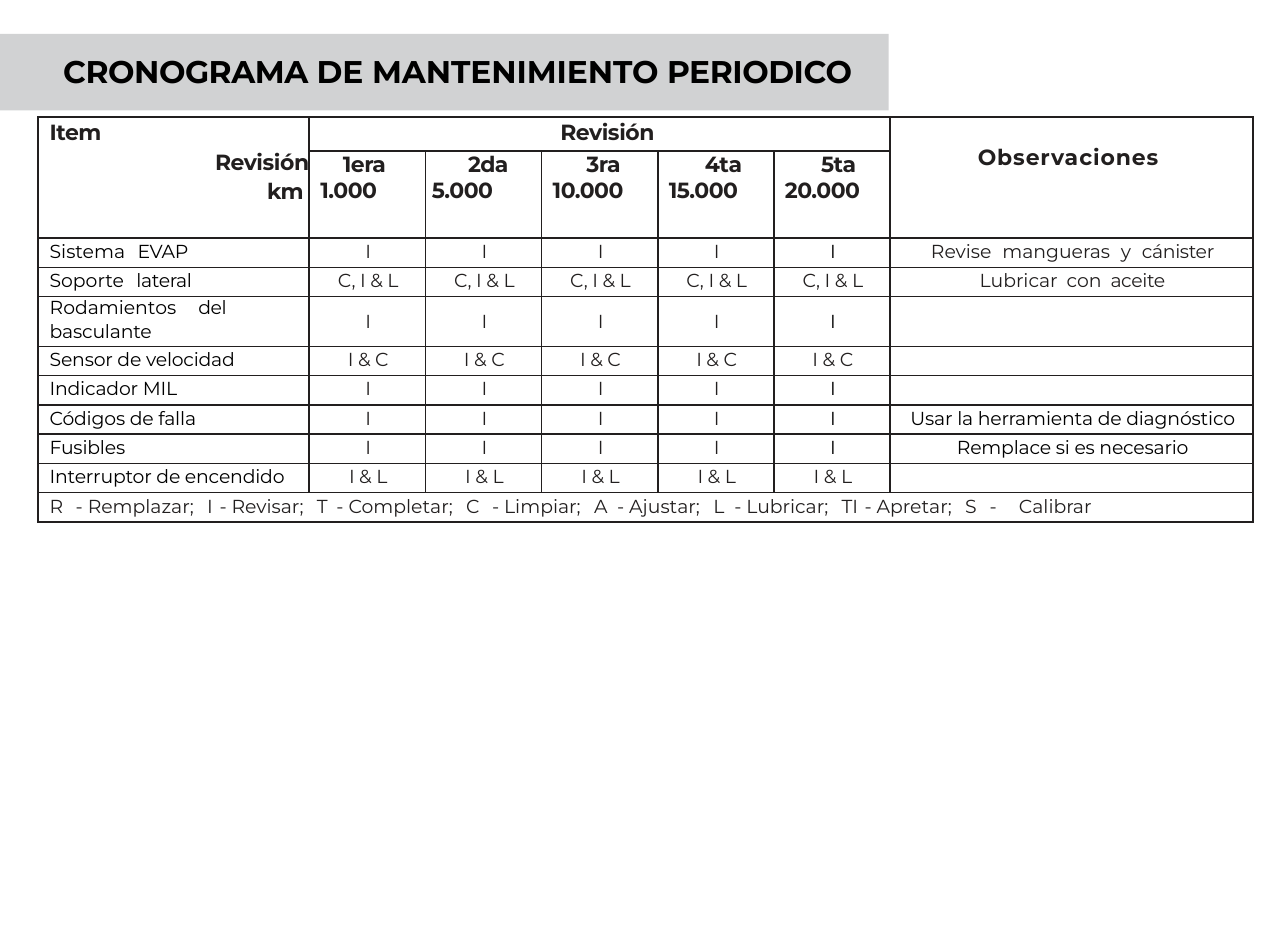
from dataclasses import dataclass

from lxml.etree import SubElement
from pptx import Presentation
from pptx.dml.color import RGBColor
from pptx.enum.shapes import MSO_SHAPE
from pptx.enum.text import MSO_AUTO_SIZE, PP_ALIGN
from pptx.oxml import parse_xml
from pptx.oxml.ns import nsdecls, qn
from pptx.util import Inches, Pt

# Slide and grid, in inches
W, H = 5.71, 4.14
COLS = [1.2] + [0.515] * 5 + [1.61]
ROWS = [0.15, 0.38, 0.13, 0.13, 0.22] + [0.13] * 6
THIN_COL_EDGES = (2, 3)
HEADER_EDGES = (0, 1, 2)

FONT = "Montserrat"
INK = RGBColor(0x22, 0x1F, 0x1F)
BLACK = RGBColor(0, 0, 0)
BAND = RGBColor(0xD1, 0xD2, 0xD3)

Run = tuple[str, float]  # text, letter spacing in points


@dataclass
class Para:
    runs: list[Run]
    align: PP_ALIGN = PP_ALIGN.LEFT
    indent: float = 0.05
    before: float = 0.8
    size: float = 6
    bold: bool = False
    color: RGBColor = BLACK


@dataclass
class Service:
    item: list[list[Run]]  # one list of runs per line
    action: str
    note: list[Run]
    light: bool = False  # first rows have softer action text


def words(text: str, gap: float = 0) -> list[Run]:
    """Split a phrase into runs, widening each space by gap points."""
    head, *rest = text.split(" ")
    runs = [(head, 0)]
    for word in rest:
        runs += [(" ", gap), (word, -0.1 if word == rest[-1] else 0)]
    return runs


def plain(text: str) -> list[Run]:
    return [(text, -0.05)]


def add_paras(tf, paras: list[Para]) -> None:
    for i, para in enumerate(paras):
        p = tf.paragraphs[0] if i == 0 else tf.add_paragraph()
        p.alignment = para.align
        p.space_before = Pt(para.before)
        pPr = p._p.get_or_add_pPr()
        pPr.set("marL", str(Inches(para.indent)))
        pPr.set("indent", "0")
        for text, spacing in para.runs:
            r = p.add_run()
            r.text = text
            r.font.name, r.font.size = FONT, Pt(para.size)
            r.font.bold, r.font.color.rgb = para.bold, para.color
            r._r.get_or_add_rPr().set("spc", str(round(spacing * 100)))


def fill_cell(cell, paras: list[Para], top: float = 0.01) -> None:
    cell.margin_left = cell.margin_right = cell.margin_bottom = 0
    cell.margin_top = Inches(top)
    add_paras(cell.text_frame, paras)


def set_borders(cell, row: int, col: int) -> None:
    tcPr = cell._tc.get_or_add_tcPr()
    right, bottom = col + cell.span_width, row + cell.span_height
    if not cell.is_merge_origin:
        right, bottom = col + 1, row + 1
    widths = [0.5 if e in THIN_COL_EDGES else 0.75 for e in (col, right)]
    widths += [0.75 if e in HEADER_EDGES else 0.5 for e in (row, bottom)]
    for i, (side, width) in enumerate(zip("LRTB", widths)):
        tcPr.insert(i, parse_xml(
            f'<a:ln{side} {nsdecls("a")} w="{Pt(width)}"><a:solidFill>'
            f'<a:srgbClr val="{INK}"/></a:solidFill></a:ln{side}>'))


def head(text: str, indent: float, before: float = 0.2, spacing: float = -0.15,
         align: PP_ALIGN = PP_ALIGN.LEFT) -> Para:
    return Para([(text, spacing)], align, indent, before, 7, True, INK)


# Revision, km, and the indent of each
REVISIONS = [("1era", "1.000", 0.15, 0.05), ("2da", "5.000", 0.19, 0.03),
             ("3ra", "10.000", 0.2, 0.05), ("4ta", "15.000", 0.21, 0.05),
             ("5ta", "20.000", 0.21, 0.05)]

SERVICES = [
    Service([words("Sistema EVAP", 2.4)], "I", words("Revise mangueras y cánister", 1.9), True),
    Service([words("Soporte lateral", 2.4)], "C, I & L", words("Lubricar con aceite", 1.3), True),
    Service([words("Rodamientos del", 5.5), plain("basculante")], "I", []),
    Service([plain("Sensor de velocidad")], "I & C", []),
    Service([plain("Indicador MIL")], "I", []),
    Service([plain("Códigos de falla")], "I", plain("Usar la herramienta de diagnóstico")),
    Service([plain("Fusibles")], "I", plain("Remplace si es necesario")),
    Service([plain("Interruptor de encendido")], "I & L", []),
]

# Key, widening of the space after it, meaning
LEGEND = [("R", 2.4, "Remplazar"), ("I", 0.6, "Revisar"), ("T", 1.3, "Completar"),
          ("C", 2.4, "Limpiar"), ("A", 1.5, "Ajustar"), ("L", 1.6, "Lubricar"),
          ("TI", 0.5, "Apretar"), ("S", 2.6, "Calibrar")]


def legend_runs() -> list[Run]:
    runs: list[Run] = []
    for key, gap, meaning in LEGEND:
        last = key == LEGEND[-1][0]
        runs += [(key, 0), (" ", gap), ("-", 0), (" ", 5.5 if last else 0),
                 (meaning if last else meaning + ";", 0)]
        if not last:
            runs.append((" ", 2.7))
    return runs


def add_title(s) -> None:
    band = s.shapes.add_shape(MSO_SHAPE.RECTANGLE, 0, Inches(0.15),
                              Inches(0.69 * W), Inches(0.34))
    band.shadow.inherit = False
    band.fill.solid()
    band.fill.fore_color.rgb = BAND
    band.line.fill.background()

    box = s.shapes.add_textbox(Inches(0.27), Inches(0.22), Inches(0.62 * W), Inches(0.19))
    tf = box.text_frame
    tf.word_wrap, tf.auto_size = True, MSO_AUTO_SIZE.SHAPE_TO_FIT_TEXT
    tf.margin_left = tf.margin_right = tf.margin_bottom = 0
    tf.margin_top = Inches(0.01)
    title = [("CRONOGRAMA ", -0.1), ("DE MANTENIMIENTO ", 0), ("PERIODICO", -0.1)]
    add_paras(tf, [Para(title, indent=0.01, before=0.9, size=10, bold=True)])


def add_schedule(s) -> None:
    frame = s.shapes.add_table(len(ROWS), len(COLS), Inches(0.17), Inches(0.52),
                               Inches(sum(COLS)), Inches(sum(ROWS)))
    table = frame.table
    table.first_row = table.horz_banding = False
    for column, width in zip(table.columns, COLS):
        column.width = Inches(width)
    for row, height in zip(table.rows, ROWS):
        row.height = Inches(height)
    last = len(ROWS) - 1
    for top, left, bottom, right in [(0, 0, 1, 0), (0, 1, 0, 5), (0, 6, 1, 6), (last, 0, last, 6)]:
        table.cell(top, left).merge(table.cell(bottom, right))

    # Header
    fill_cell(table.cell(0, 0), [head("Item", 0.05, 0.5),
                                 head("Revisión", 0, 0.9, -0.1, PP_ALIGN.RIGHT),
                                 head("km ", 0, 0.9, -0.2, PP_ALIGN.RIGHT)])
    fill_cell(table.cell(0, 1), [head("Revisión", 0.07, 0.5, -0.1, PP_ALIGN.CENTER)])
    fill_cell(table.cell(0, 6), [head("Observaciones", 0.39, 0.1, 0.3)], top=0.12)
    for col, (name, km, name_indent, km_indent) in enumerate(REVISIONS, 1):
        fill_cell(table.cell(1, col), [head(name, name_indent), head(km, km_indent, 0)], top=0)

    # Services
    for row, service in enumerate(SERVICES, 2):
        tall = len(service.item) > 1
        item = [Para(line, before=0.4 if tall else 0.8) for line in service.item]
        if tall:
            item[0].before = 0
        fill_cell(table.cell(row, 0), item, top=0 if tall else 0.01)
        for col in range(1, 6):
            color = BLACK if col == 5 and service.action == "I" else INK
            action = Para(plain(service.action), PP_ALIGN.CENTER, 0.01,
                          4 if tall else 0.8, color=color)
            fill_cell(table.cell(row, col), [action], top=0.06 if tall else 0.01)
        note = Para(service.note, PP_ALIGN.CENTER, 0.01,
                    color=INK if service.light else BLACK)
        fill_cell(table.cell(row, 6), [note] if service.note else [])

    # Legend
    fill_cell(table.cell(last, 0), [Para(legend_runs(), color=INK)])

    # Borders, and a small text size for empty cells
    for row in range(len(ROWS)):
        for col in range(len(COLS)):
            cell = table.cell(row, col)
            cell.fill.background()
            if not cell.is_spanned:
                set_borders(cell, row, col)
            if not cell.text_frame.text:
                SubElement(cell.text_frame.paragraphs[0]._p, qn("a:endParaRPr"), sz="600")


def main() -> None:
    prs = Presentation()
    prs.slide_width, prs.slide_height = Inches(W), Inches(H)
    s = prs.slides.add_slide(prs.slide_layouts[6])
    add_title(s)
    add_schedule(s)
    prs.save("out.pptx")


if __name__ == "__main__":
    main()
